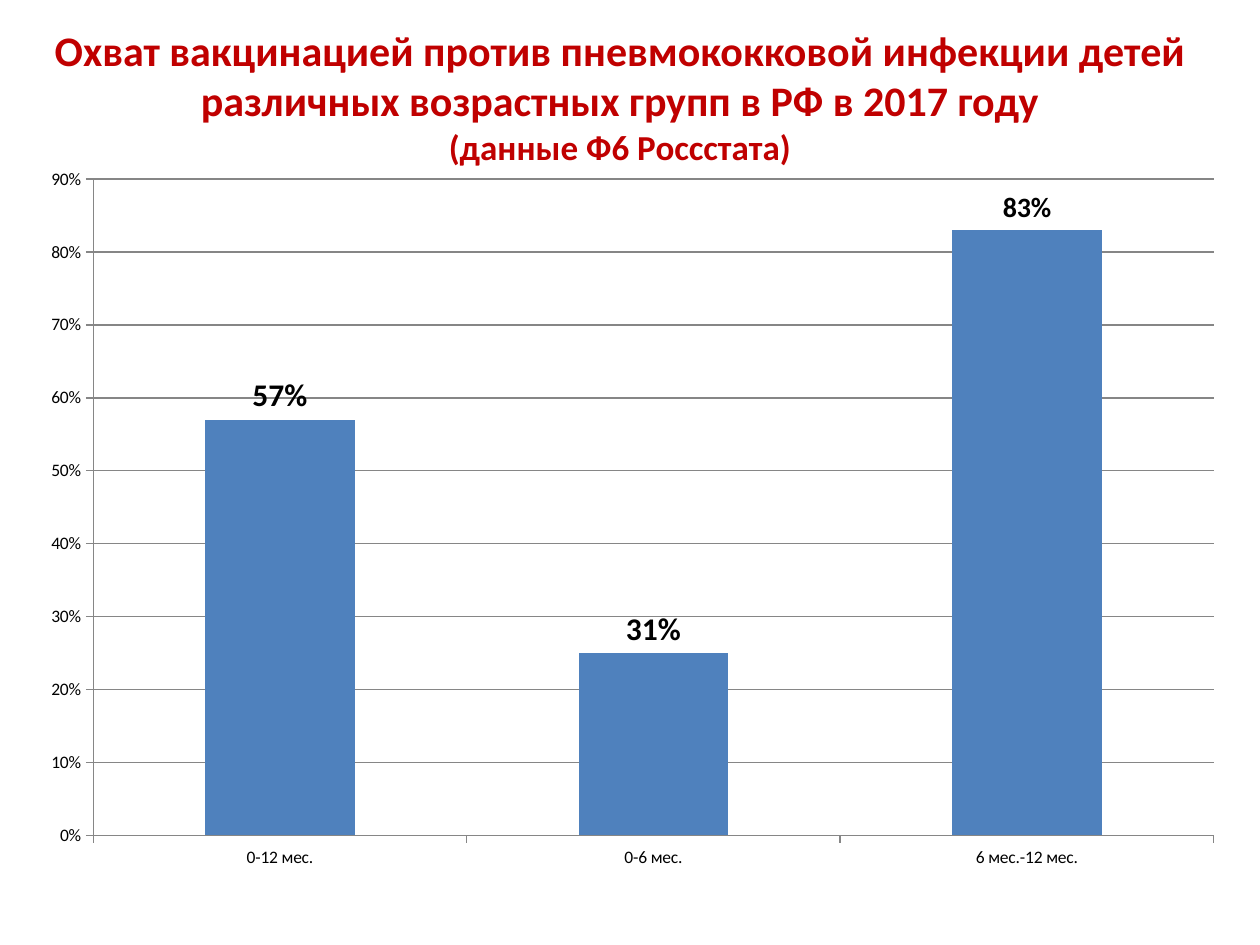
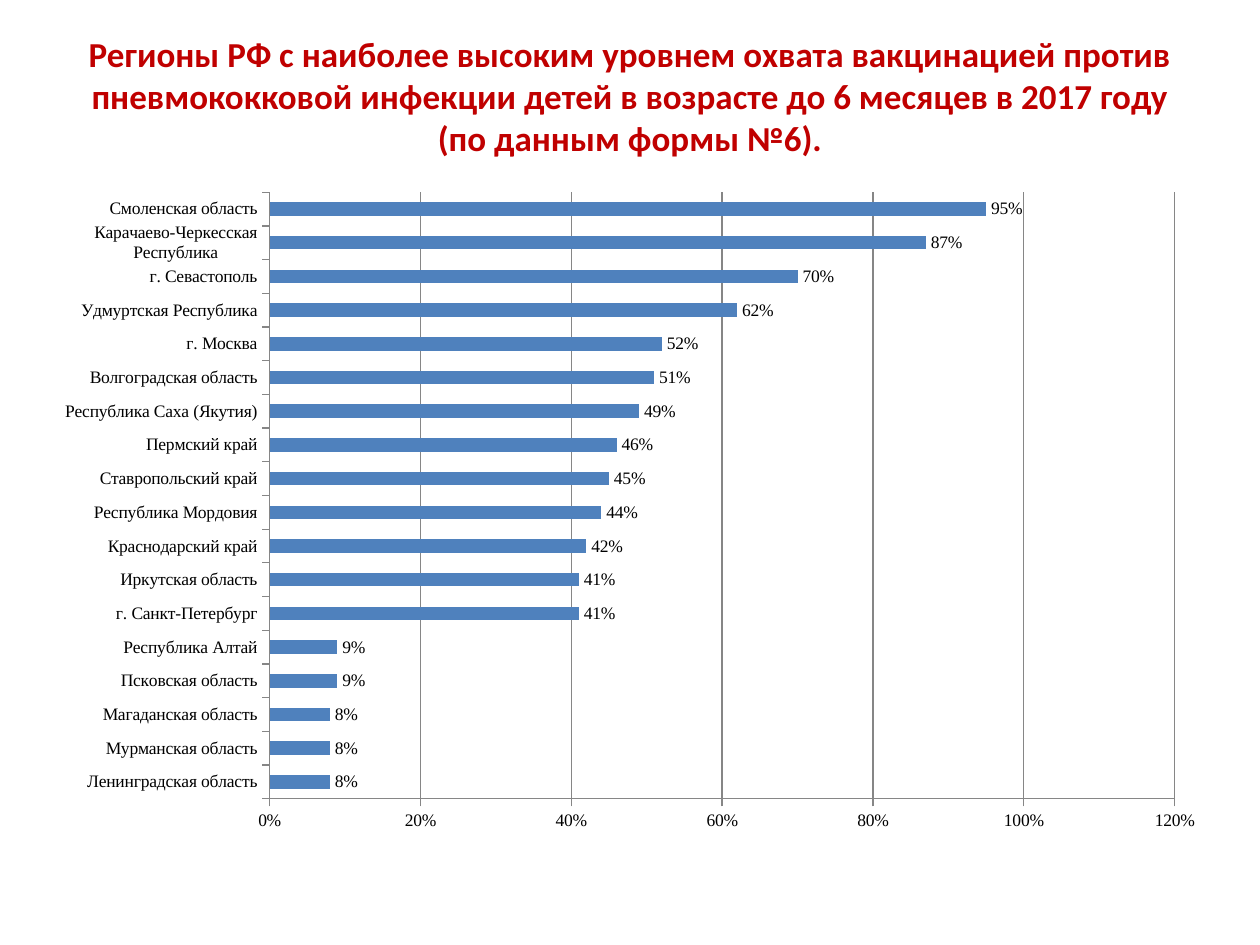
from copy import deepcopy
from dataclasses import dataclass

from lxml.etree import SubElement
from pptx import Presentation
from pptx.chart.data import CategoryChartData
from pptx.dml.color import RGBColor
from pptx.enum.chart import XL_CHART_TYPE, XL_LABEL_POSITION, XL_TICK_MARK
from pptx.enum.text import MSO_ANCHOR, MSO_AUTO_SIZE, PP_ALIGN
from pptx.oxml.ns import qn
from pptx.util import Inches, Pt


@dataclass(frozen=True)
class Theme:
    title: RGBColor = RGBColor(0xC0, 0x00, 0x00)
    bar: RGBColor = RGBColor(0x4F, 0x81, 0xBD)
    text: RGBColor = RGBColor(0x00, 0x00, 0x00)
    line: RGBColor = RGBColor(0x86, 0x86, 0x86)
    title_font: str = "Calibri"
    table_font: str = "Times New Roman"
    big: int = 24
    medium: int = 20
    label: int = 18
    label_small: int = 16
    small: int = 10
    percent: str = "0%"


T = Theme()

AGE_COVERAGE = {"0-12 мес.": 0.57, "0-6 мес.": 0.25, "6 мес.-12 мес.": 0.83}

REGION_COVERAGE = {
    "Ленинградская область": 0.08,
    "Мурманская область": 0.08,
    "Магаданская область": 0.08,
    "Псковская область": 0.09,
    "Республика Алтай": 0.09,
    "г. Санкт-Петербург": 0.41,
    "Иркутская область": 0.41,
    "Краснодарский край": 0.42,
    "Республика Мордовия": 0.44,
    "Ставропольский край": 0.45,
    "Пермский край": 0.46,
    "Республика Саха (Якутия)": 0.49,
    "Волгоградская область": 0.51,
    "г. Москва": 0.52,
    "Удмуртская Республика": 0.62,
    "г. Севастополь": 0.7,
    "Карачаево-Черкесская Республика": 0.87,
    "Смоленская область": 0.95,
}


def style_font(font, size, color=T.text, name=None, bold=None):
    font.size = Pt(size)
    font.color.rgb = color
    font.bold = bold
    if name:
        font.name = name


def add_title_slide(prs, left, width, lines):
    s = prs.slides.add_slide(prs.slide_layouts[5])
    sp = s.shapes.title
    sp.left, sp.top = Inches(left), Inches(0.3)
    sp.width, sp.height = Inches(width), Inches(1.25)
    tf = sp.text_frame
    tf.word_wrap = True
    tf.auto_size = MSO_AUTO_SIZE.NONE
    tf.vertical_anchor = MSO_ANCHOR.MIDDLE
    tf.margin_bottom = Inches(0.38)
    p = tf.paragraphs[0]
    p.alignment = PP_ALIGN.CENTER
    r = None
    for text, size in lines:
        if r is not None:
            p.add_line_break()
            r._r.getnext().append(deepcopy(r._r.find(qn("a:rPr"))))
        r = p.add_run()
        r.text = text
        style_font(r.font, size, T.title, T.title_font, True)
    return s


def style_line(line):
    line.color.rgb = T.line
    line.width = Pt(0.75)


def place_plot(chart, x, y, w, h):
    area = chart.element.find(".//" + qn("c:plotArea"))
    for old in area.findall(qn("c:layout")):
        area.remove(old)
    layout = SubElement(area, qn("c:layout"))
    area.insert(0, layout)
    manual = SubElement(layout, qn("c:manualLayout"))
    settings = {"layoutTarget": "inner", "xMode": "edge", "yMode": "edge",
                "x": x, "y": y, "w": w, "h": h}
    for tag, value in settings.items():
        SubElement(manual, qn("c:" + tag)).set("val", str(value))


def add_bar_chart(s, kind, box, plot_box, coverage, font, top, step):
    data = CategoryChartData(number_format=T.percent)
    data.categories = list(coverage)
    data.add_series("Series 1", list(coverage.values()))
    chart = s.shapes.add_chart(kind, *map(Inches, box), data).chart
    chart.has_legend = False
    chart.has_title = False
    style_font(chart.font, T.small, name=font)
    place_plot(chart, *plot_box)

    for axis in (chart.category_axis, chart.value_axis):
        axis.major_tick_mark = XL_TICK_MARK.OUTSIDE
        axis.minor_tick_mark = XL_TICK_MARK.NONE
        style_line(axis.format.line)
    axis = chart.value_axis
    axis.minimum_scale, axis.maximum_scale, axis.major_unit = 0, top, step
    axis.has_major_gridlines = True
    style_line(axis.major_gridlines.format.line)
    axis.tick_labels.number_format = T.percent
    axis.tick_labels.number_format_is_linked = False

    plot = chart.plots[0]
    plot.gap_width = 150
    plot.vary_by_categories = False
    series = plot.series[0]
    series.invert_if_negative = False
    series.format.fill.solid()
    series.format.fill.fore_color.rgb = T.bar
    labels = series.data_labels
    labels.show_value = True
    labels.position = XL_LABEL_POSITION.OUTSIDE_END
    labels.number_format = T.percent
    labels.number_format_is_linked = False
    style_font(labels.font, T.small, name=font)
    return series


def add_point_label(series, index, text, size):
    label = series.points[index].data_label
    r = label.text_frame.paragraphs[0].add_run()
    r.text = text
    style_font(r.font, size, name=T.title_font, bold=True)
    label.position = XL_LABEL_POSITION.OUTSIDE_END


def add_age_slide(prs):
    s = add_title_slide(prs, 0.17, 9.5, [
        ("Охват вакцинацией против пневмококковой инфекции детей "
         "различных возрастных групп в РФ в 2017 году", T.big),
        ("(данные Ф6 Россстата)", T.medium),
    ])
    series = add_bar_chart(
        s, XL_CHART_TYPE.COLUMN_CLUSTERED, (0.17, 1.33, 9.5, 5.75),
        (0.06, 0.016, 0.936, 0.906), AGE_COVERAGE, T.title_font, 0.9, 0.1)
    point_labels = [("57%", T.label), ("31%", T.label), ("83%", T.label_small)]
    for index, (text, size) in enumerate(point_labels):
        add_point_label(series, index, text, size)


def add_region_slide(prs):
    s = add_title_slide(prs, 0.5, 9, [
        ("Регионы РФ с наиболее высоким уровнем охвата вакцинацией против "
         "пневмококковой инфекции детей в возрасте до 6 месяцев в 2017 году "
         "(по данным формы №6).", T.medium),
    ])
    add_bar_chart(
        s, XL_CHART_TYPE.BAR_CLUSTERED, (0.33, 1.42, 9.33, 5.28),
        (0.194, 0.02, 0.77, 0.912), REGION_COVERAGE, T.table_font, 1.2, 0.2)


def main():
    prs = Presentation()
    prs.slide_width, prs.slide_height = Inches(10), Inches(7.5)
    add_age_slide(prs)
    add_region_slide(prs)
    prs.save("out.pptx")


if __name__ == "__main__":
    main()
